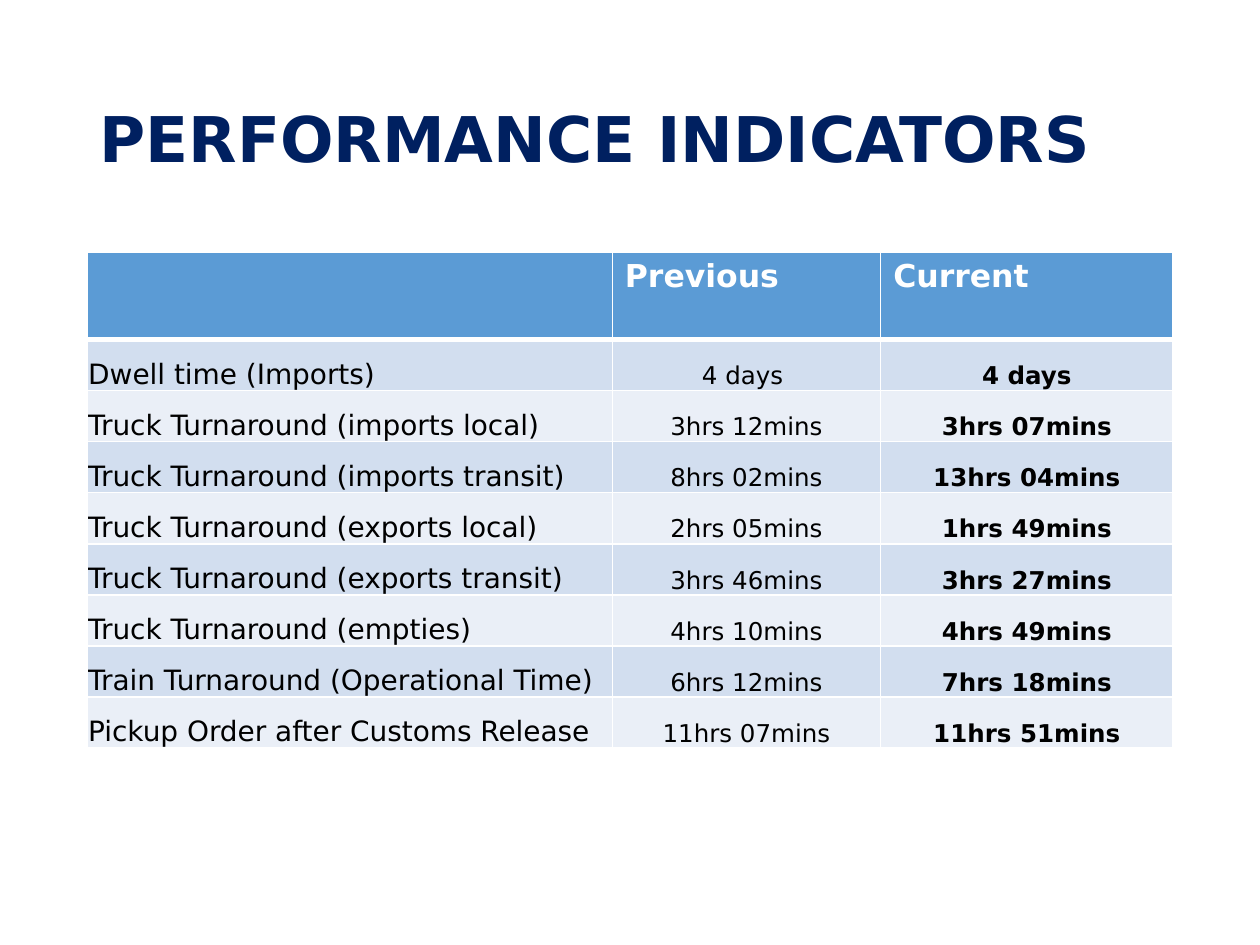
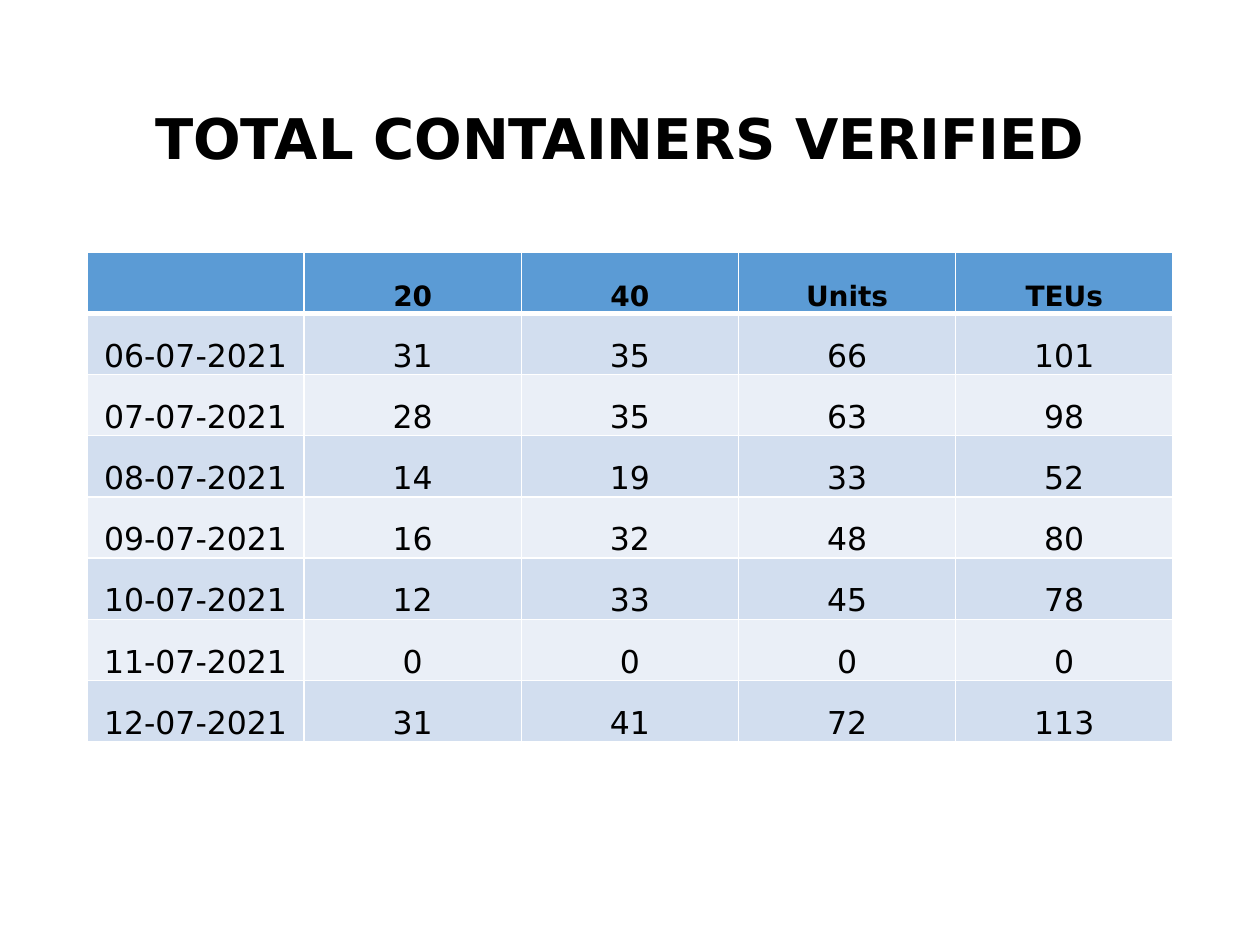
from pptx import Presentation
from pptx.dml.color import RGBColor
from pptx.enum.text import MSO_ANCHOR, PP_ALIGN
from pptx.oxml import parse_xml
from pptx.oxml.ns import nsdecls
from pptx.util import Pt

FONT = "DejaVu Sans"
NAVY, BLACK, WHITE = "002060", "000000", "FFFFFF"
HEADER_BLUE, BANDS = "5B9BD5", ("D2DEEF", "EAEFF7")
LEFT, WIDTH = 49.68, 620.64
TITLE_TOP, TITLE_HEIGHT, TABLE_TOP = 28.8, 104.4, 144
CELL_INSET = 0.72


def rgb(value):
    return RGBColor.from_string(value)


def format_text(paragraph, align, size, bold, color):
    paragraph.alignment = align
    font = paragraph.font
    for run in paragraph.runs:
        font = run.font
    font.name, font.size, font.bold = FONT, Pt(size), bold
    font.color.rgb = rgb(color)


indicators = [
    ("", "Previous", "Current"),
    ("Dwell time (Imports)", "4 days ", "4 days"),
    ("Truck Turnaround (imports local)", "3hrs 12mins", "3hrs 07mins"),
    ("Truck Turnaround (imports transit)", "8hrs 02mins", "13hrs 04mins"),
    ("Truck Turnaround (exports local)", "2hrs 05mins", "1hrs 49mins"),
    ("Truck Turnaround (exports transit)", "3hrs 46mins", "3hrs 27mins"),
    ("Truck Turnaround (empties)", "4hrs 10mins", "4hrs 49mins"),
    ("Train Turnaround (Operational Time)", "6hrs 12mins", "7hrs 18mins"),
    ("Pickup Order after Customs Release", "11hrs 07mins", "11hrs 51mins"),
]
containers = [
    ("", "20", "40", "Units", "TEUs"),
    ("06-07-2021", 31, 35, 66, 101),
    ("07-07-2021", 28, 35, 63, 98),
    ("08-07-2021", 14, 19, 33, 52),
    ("09-07-2021", 16, 32, 48, 80),
    ("10-07-2021", 12, 33, 45, 78),
    ("11-07-2021", 0, 0, 0, 0),
    ("12-07-2021", 31, 41, 72, 113),
]

# Text styles are (alignment, size, bold, colour); column styles apply below the header.
pages = [
    {
        "title": "PERFORMANCE INDICATORS",
        "title_style": (PP_ALIGN.LEFT, 36, True, NAVY),
        "rows": indicators,
        "widths": [300.24, 153.36, 167.04],
        "header_height": 50,
        "row_height": 29.2,
        "header_style": (PP_ALIGN.LEFT, 18, True, WHITE),
        "header_at_top": True,
        "column_styles": [
            (PP_ALIGN.LEFT, 16, False, BLACK),
            (PP_ALIGN.CENTER, 14, False, BLACK),
            (PP_ALIGN.CENTER, 14, True, BLACK),
        ],
    },
    {
        "title": "TOTAL CONTAINERS VERIFIED ",
        "title_style": (PP_ALIGN.CENTER, 32, True, BLACK),
        "rows": containers,
        "widths": [WIDTH / 5] * 5,
        "header_height": 35,
        "row_height": 35,
        "header_style": (PP_ALIGN.CENTER, 16, True, BLACK),
        "header_at_top": False,
        "column_styles": [(PP_ALIGN.CENTER, 18, False, BLACK)] * 5,
    },
]

prs = Presentation()
prs.slide_width, prs.slide_height = Pt(720), Pt(540)

for page in pages:
    slide = prs.slides.add_slide(prs.slide_layouts[6])

    title = slide.shapes.add_textbox(Pt(LEFT), Pt(TITLE_TOP), Pt(WIDTH), Pt(TITLE_HEIGHT))
    title_frame = title.text_frame
    title_frame.word_wrap = True
    title_frame.vertical_anchor = MSO_ANCHOR.MIDDLE
    title_frame.text = page["title"]
    title_frame.paragraphs[0].line_spacing = 0.9
    format_text(title_frame.paragraphs[0], *page["title_style"])

    rows, widths = page["rows"], page["widths"]
    height = page["header_height"] + page["row_height"] * (len(rows) - 1)
    table = slide.shapes.add_table(
        len(rows), len(widths), Pt(LEFT), Pt(TABLE_TOP), Pt(WIDTH), Pt(height)
    ).table
    for column, width in zip(table.columns, widths):
        column.width = Pt(width)

    for r, values in enumerate(rows):
        is_header = r == 0
        table.rows[r].height = Pt(page["header_height" if is_header else "row_height"])
        for c, value in enumerate(values):
            cell = table.cell(r, c)
            cell.text_frame.text = str(value)
            style = page["header_style"] if is_header else page["column_styles"][c]
            format_text(cell.text_frame.paragraphs[0], *style)

            if not (is_header and (page["header_at_top"] or not value)):
                cell.vertical_anchor = MSO_ANCHOR.BOTTOM
                cell.margin_left = cell.margin_right = cell.margin_top = Pt(CELL_INSET)
                cell.margin_bottom = 0

            # The line under the header is heavier than the rest of the grid.
            below_header = "B" if is_header else "T" if r == 1 else None
            for side in "LRTB":
                line_width = Pt(3 if side == below_header else 1)
                cell._tc.get_or_add_tcPr().append(parse_xml(
                    f'<a:ln{side} {nsdecls("a")} w="{line_width}"><a:solidFill>'
                    f'<a:srgbClr val="{WHITE}"/></a:solidFill></a:ln{side}>'
                ))
            cell.fill.solid()
            cell.fill.fore_color.rgb = rgb(HEADER_BLUE if is_header else BANDS[(r - 1) % 2])

prs.save("out.pptx")
